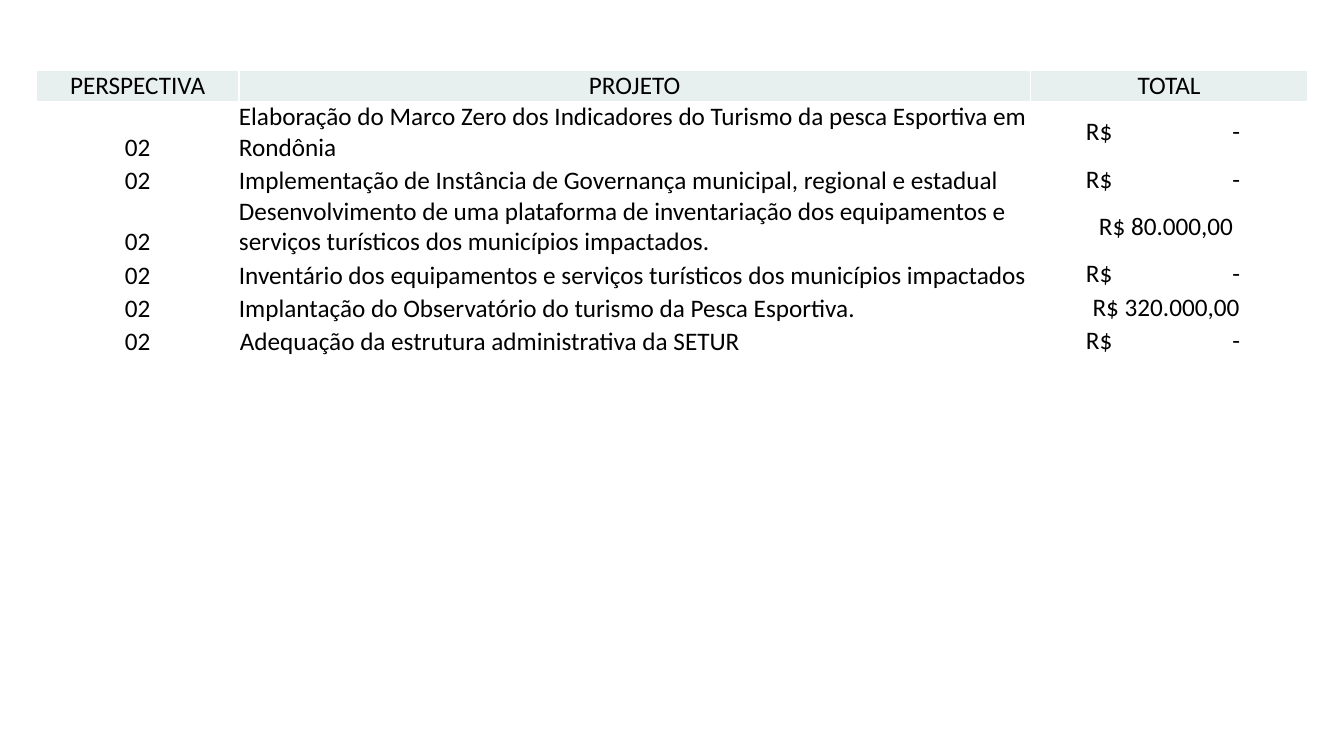
from dataclasses import dataclass

from lxml.etree import SubElement
from pptx import Presentation
from pptx.dml.color import RGBColor
from pptx.enum.text import MSO_ANCHOR, PP_ALIGN
from pptx.oxml import parse_xml
from pptx.oxml.ns import nsdecls, qn
from pptx.table import _Cell
from pptx.util import Emu, Inches, Pt

SLIDE_WIDTH, SLIDE_HEIGHT = 13.33, 7.5
TABLE_LEFT, TABLE_TOP = 0.36, 0.7
COLUMN_WIDTHS = (2.01, 7.85, 2.75)
HEADER_HEIGHT, ROW_HEIGHT, TALL_ROW_HEIGHT = 0.18, 0.33, 0.49
WHITE, BLACK, HEADER_FILL = "FFFFFF", "000000", "E8EFEF"
HEADINGS = ("PERSPECTIVA", "PROJETO", "TOTAL")
NO_AMOUNT = "R$\t-"


@dataclass(frozen=True)
class Project:
    name: str
    total: str = NO_AMOUNT
    height: float = ROW_HEIGHT
    inset: float = 0
    perspective: str = "02"


@dataclass(frozen=True)
class CellStyle:
    fill: str = WHITE
    align: PP_ALIGN = PP_ALIGN.CENTER
    anchor: MSO_ANCHOR = MSO_ANCHOR.BOTTOM
    left: float = 0
    right: float = 0
    top: float = 0
    tab: float = 0


PROJECTS = (
    Project("Elaboração do Marco Zero dos Indicadores do Turismo da pesca Esportiva em Rondônia"),
    Project("Implementação de Instância de Governança municipal, regional e estadual"),
    Project("Desenvolvimento de uma plataforma de inventariação dos equipamentos e "
            "serviços turísticos dos municípios impactados.",
            "R$ 80.000,00", TALL_ROW_HEIGHT),
    Project("Inventário dos equipamentos e serviços turísticos dos municípios impactados"),
    Project("Implantação do Observatório do turismo da Pesca Esportiva.", "R$ 320.000,00"),
    Project("Adequação da estrutura administrativa da SETUR", inset=0.01),
)


def color(value: str) -> RGBColor:
    return RGBColor.from_string(value)


def add_borders(cell: _Cell) -> None:
    properties = cell._tc.get_or_add_tcPr()
    for index, side in enumerate(("lnL", "lnR", "lnT", "lnB")):
        properties.insert(index, parse_xml(
            f'<a:{side} {nsdecls("a")} w="{Pt(1)}"><a:solidFill>'
            f'<a:srgbClr val="{WHITE}"/></a:solidFill></a:{side}>'))


def write_cell(cell: _Cell, text: str, style: CellStyle) -> None:
    cell.fill.solid()
    cell.fill.fore_color.rgb = color(style.fill)
    add_borders(cell)
    cell.vertical_anchor = style.anchor
    cell.margin_left, cell.margin_right = Inches(style.left), Inches(style.right)
    cell.margin_top, cell.margin_bottom = Inches(style.top), Emu(0)
    para = cell.text_frame.paragraphs[0]
    para.add_run().text = text
    para.alignment = style.align
    para.font.name, para.font.size, para.font.bold = "Calibri", Pt(18), False
    para.font.color.rgb = color(BLACK)
    if style.tab:
        stops = parse_xml(f'<a:tabLst {nsdecls("a")}/>')
        SubElement(stops, qn("a:tab"), pos=str(Inches(style.tab)), algn="r")
        para._p.get_or_add_pPr().insert(0, stops)


def total_style(project: Project) -> CellStyle:
    # Currency sign on the left and dash on a right tab stop
    if project.total == NO_AMOUNT:
        return CellStyle(align=PP_ALIGN.LEFT, anchor=MSO_ANCHOR.MIDDLE,
                         left=0.55, right=0.5, top=project.inset, tab=1.53)
    return CellStyle(anchor=MSO_ANCHOR.MIDDLE, right=0.06)


def main() -> None:
    deck = Presentation()
    deck.slide_width, deck.slide_height = Inches(SLIDE_WIDTH), Inches(SLIDE_HEIGHT)
    page = deck.slides.add_slide(deck.slide_layouts[6])

    # Table grid
    heights = (HEADER_HEIGHT, *(project.height for project in PROJECTS))
    table = page.shapes.add_table(
        len(heights), len(COLUMN_WIDTHS), Inches(TABLE_LEFT), Inches(TABLE_TOP),
        Inches(sum(COLUMN_WIDTHS)), Inches(sum(heights))).table
    for column, width in zip(table.columns, COLUMN_WIDTHS):
        column.width = Inches(width)
    for row, height in zip(table.rows, heights):
        row.height = Inches(height)

    # Header row
    for cell, heading in zip(table.rows[0].cells, HEADINGS):
        write_cell(cell, heading, CellStyle(fill=HEADER_FILL))

    # Project rows
    for index, project in enumerate(PROJECTS, start=1):
        inset = project.inset
        centered = CellStyle(left=inset, right=inset, top=inset)
        listed = CellStyle(align=PP_ALIGN.LEFT, left=inset, right=inset, top=inset)
        write_cell(table.cell(index, 0), project.perspective, centered)
        write_cell(table.cell(index, 1), project.name, listed)
        write_cell(table.cell(index, 2), project.total, total_style(project))

    deck.save("out.pptx")


if __name__ == "__main__":
    main()
